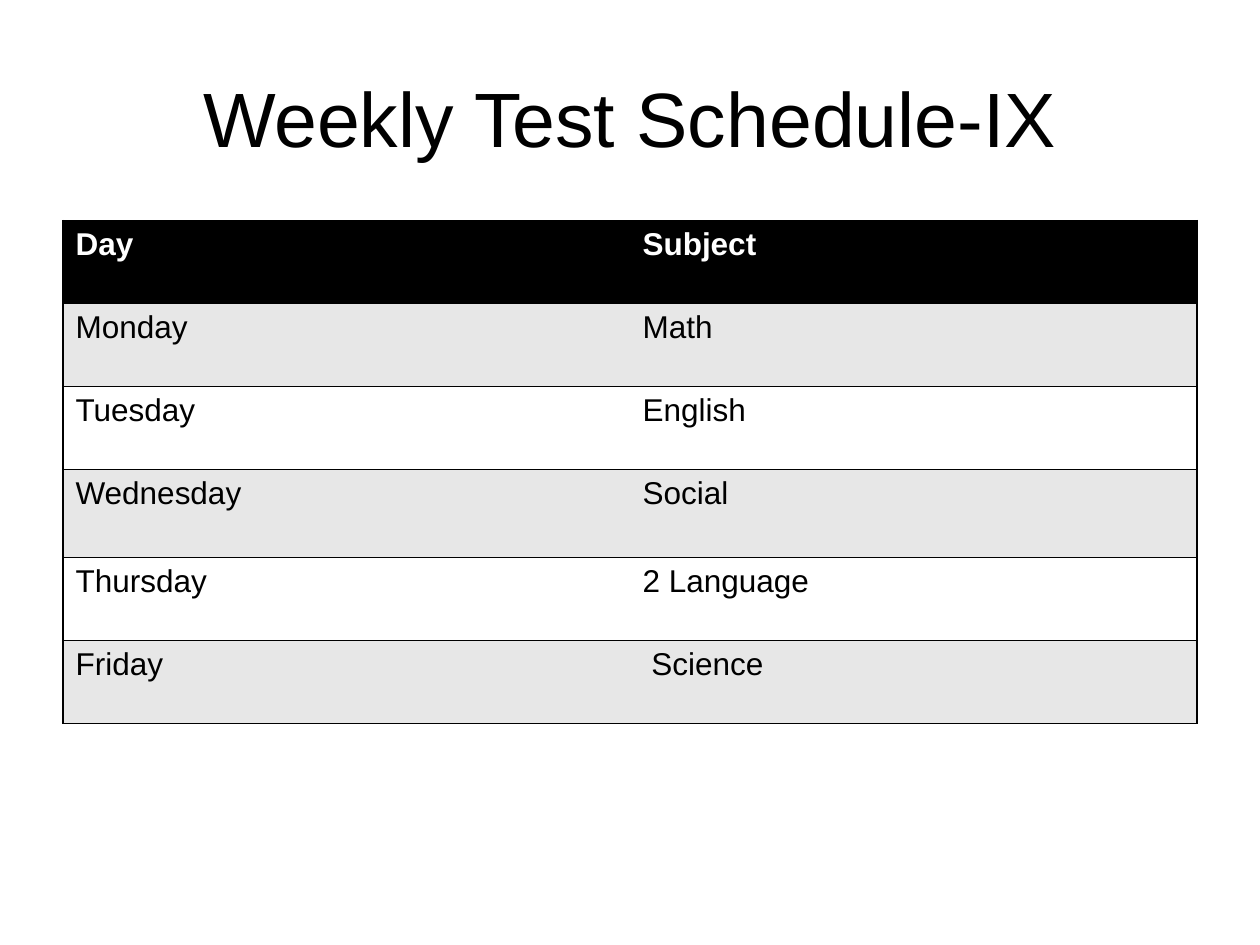
from dataclasses import dataclass

from lxml import etree
from pptx import Presentation
from pptx import util as u
from pptx.dml.color import RGBColor
from pptx.enum import text
from pptx.oxml import ns


@dataclass(frozen=True)
class Theme:
    font: str = "Arial"
    ink: str = "000000"
    paper: str = "FFFFFF"
    band: str = "E7E7E7"
    title_size: float = 44
    body_size: float = 18
    rule: float = 1


def assign(target, values):
    for name, value in values.items():
        setattr(target, name, value)


class SlideBuilder:
    def __init__(self, deck, theme):
        self.theme = theme
        self.slide = deck.slides.add_slide(deck.slide_layouts[5])

    def place(self, box, left, top, width, height):
        assign(box, {"left": u.Pt(left), "top": u.Pt(top),
                     "width": u.Pt(width), "height": u.Pt(height)})

    def add_words(self, para, words, size, color, bold=False):
        span = para.add_run()
        span.text = words
        assign(span.font, {"name": self.theme.font, "size": u.Pt(size), "bold": bold})
        span.font.color.rgb = RGBColor.from_string(color)

    def title(self, words, *area):
        box = self.slide.shapes.title
        self.place(box, *area)
        assign(box.text_frame, {"word_wrap": True,
                                "vertical_anchor": text.MSO_ANCHOR.MIDDLE})
        para = box.text_frame.paragraphs[0]
        para.alignment = text.PP_ALIGN.CENTER
        self.add_words(para, words, self.theme.title_size, self.theme.ink)

    def borders(self, cell, drawn):
        """Rule the drawn sides of a cell and clear the others."""
        properties = cell._tc.get_or_add_tcPr()
        for side in "LRTB":
            line = etree.SubElement(properties, ns.qn(f"a:ln{side}"),
                                    w=str(u.Pt(self.theme.rule)))
            if side in drawn:
                fill = etree.SubElement(line, ns.qn("a:solidFill"))
                etree.SubElement(fill, ns.qn("a:srgbClr"), val=self.theme.ink)
            else:
                etree.SubElement(line, ns.qn("a:noFill"))

    def table(self, rows, heights, left, top, width):
        columns = len(rows[0])
        table = self.slide.shapes.add_table(
            len(rows), columns, u.Pt(left), u.Pt(top),
            u.Pt(width), u.Pt(sum(heights))).table
        for column in table.columns:
            column.width = u.Pt(width / columns)
        for r, (words, height) in enumerate(zip(rows, heights)):
            table.rows[r].height = u.Pt(height)
            header = r == 0
            fill = self.theme.ink if header else (self.theme.paper, self.theme.band)[r % 2]
            color = self.theme.paper if header else self.theme.ink
            for c, word in enumerate(words):
                cell = table.cell(r, c)
                sides = "TB" + ("L" if c == 0 else "") + ("R" if c == columns - 1 else "")
                self.borders(cell, sides)
                cell.fill.solid()
                cell.fill.fore_color.rgb = RGBColor.from_string(fill)
                assign(cell, {"margin_left": u.Pt(7.2), "margin_right": u.Pt(7.2),
                              "margin_top": u.Pt(3.6), "margin_bottom": u.Pt(3.6)})
                self.add_words(cell.text_frame.paragraphs[0], word,
                               self.theme.body_size, color, header)


def main():
    deck = Presentation()
    assign(deck, {"slide_width": u.Pt(720), "slide_height": u.Pt(540)})
    builder = SlideBuilder(deck, Theme())

    # Heading
    builder.title("Weekly Test Schedule-IX", 36, 21.6, 648, 90)

    # Schedule: equal rows, with a slightly taller Wednesday
    schedule = [
        ("Day", "Subject"),
        ("Monday", "Math"),
        ("Tuesday", "English"),
        ("Wednesday", "Social"),
        ("Thursday", "2 Language"),
        ("Friday", " Science"),
    ]
    heights = [50.4 if day == "Wednesday" else 47.4 for day, _ in schedule]
    builder.table(schedule, heights, 36, 126, 648)

    deck.save("out.pptx")


if __name__ == "__main__":
    main()
